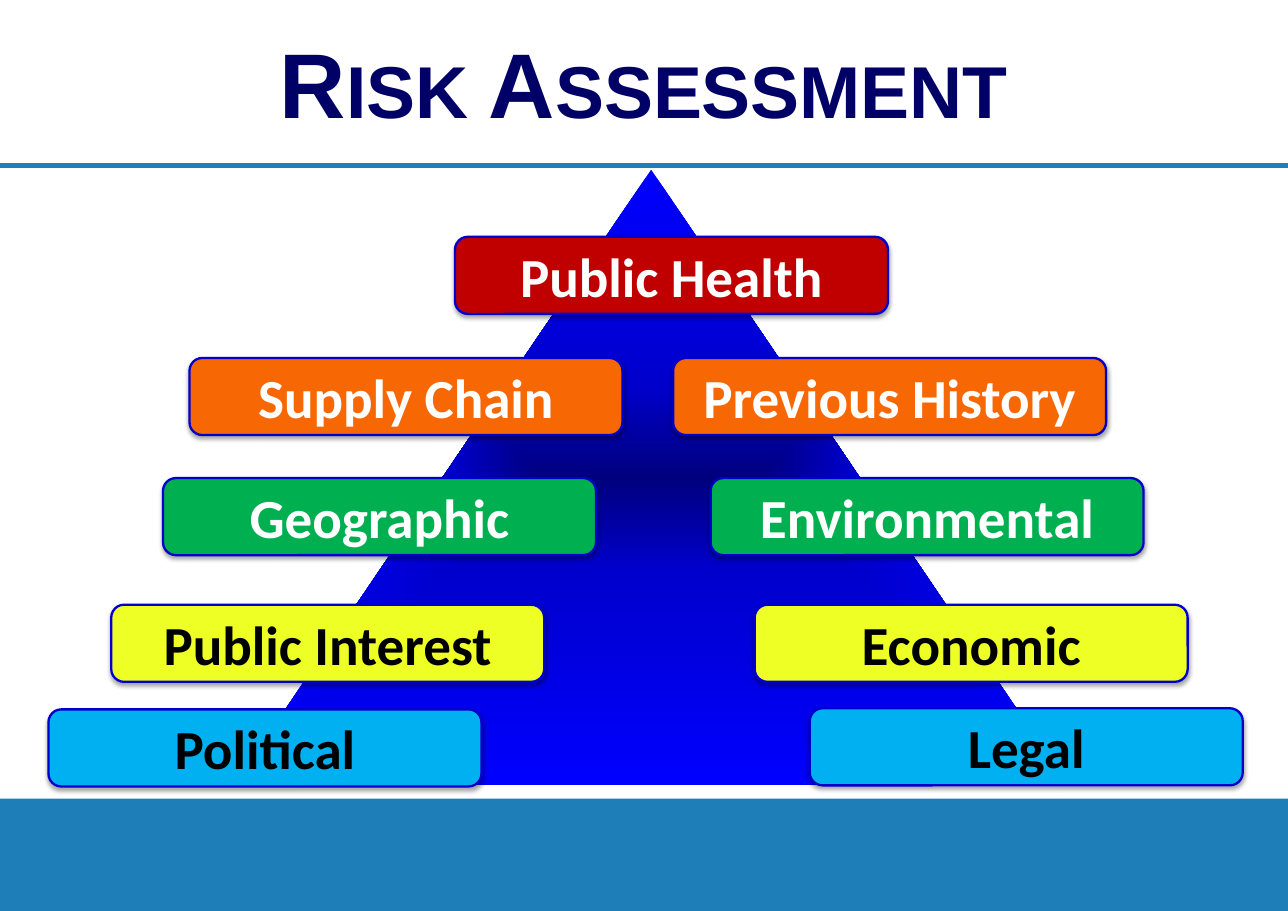
"""Build the risk assessment pyramid slide."""
from dataclasses import dataclass

from lxml import etree
from pptx import Presentation
from pptx.dml.color import RGBColor
from pptx.enum.shapes import MSO_CONNECTOR, MSO_SHAPE
from pptx.enum.text import MSO_ANCHOR, PP_ALIGN
from pptx.oxml import parse_xml
from pptx.oxml.ns import qn
from pptx.util import Inches, Pt

STRAIGHT = MSO_CONNECTOR.STRAIGHT
RECTANGLE = MSO_SHAPE.RECTANGLE
ROUNDED = MSO_SHAPE.ROUNDED_RECTANGLE
TRIANGLE = MSO_SHAPE.ISOSCELES_TRIANGLE
MIDDLE = MSO_ANCHOR.MIDDLE
CENTER = PP_ALIGN.CENTER
DRAWING_NS = "http://schemas.openxmlformats.org/drawingml/2006/main"


@dataclass(frozen=True)
class Theme:
    """Colours, fonts and sizes of the slide."""
    band: str = "1E7FB8"
    title: str = "000066"
    title_shadow: str = "8FCBEF"
    outline: str = "0000CC"
    black: str = "000000"
    white: str = "FFFFFF"
    red: str = "C00000"
    orange: str = "F76805"
    green: str = "00B050"
    yellow: str = "EEFF25"
    sky: str = "00B0F0"
    pyramid: tuple = ((0, "00007E"), (30, "0000CC"), (100, "0000FF"))
    title_font: str = "Arial"
    label_font: str = "Calibri"
    title_size: int = 60
    label_size: int = 36
    rule_width: float = 3
    outline_width: float = 1.5


THEME = Theme()
SLIDE_WIDTH, SLIDE_HEIGHT = 11.69, 8.27
LABEL_WIDTH, LABEL_HEIGHT = 3.93, 0.7
LABELS = (
    ("Public Health", 4.13, 2.15, THEME.red, THEME.white),
    ("Geographic", 1.48, 4.34, THEME.green, THEME.white),
    ("Environmental", 6.45, 4.34, THEME.green, THEME.white),
    ("Public Interest", 1.01, 5.49, THEME.yellow, THEME.black),
    ("Economic", 6.85, 5.49, THEME.yellow, THEME.black),
    ("Legal", 7.35, 6.43, THEME.sky, THEME.black),
    ("Political", 0.44, 6.44, THEME.sky, THEME.black),
    ("Previous History", 6.11, 3.25, THEME.orange, THEME.white),
    ("Supply Chain", 1.72, 3.25, THEME.orange, THEME.white),
)


def add_shadow(effects, color, opacity, blur, distance, degrees):
    """Put an outer shadow in an effect list."""
    shadow = etree.SubElement(
        effects, qn("a:outerShdw"), blurRad=str(Pt(blur)),
        dist=str(Pt(distance)), dir=str(degrees * 60000),
        algn="t", rotWithShape="0")
    tint = etree.SubElement(shadow, qn("a:srgbClr"), val=color)
    etree.SubElement(tint, qn("a:alpha"), val=str(opacity * 1000))


def add_block(page, kind, left, top, width, height, fill):
    """Add a plain filled shape without line or shadow."""
    block = page.shapes.add_shape(
        kind, Inches(left), Inches(top), Inches(width), Inches(height))
    block.shadow.inherit = False
    block.line.fill.background()
    block.fill.solid()
    block.fill.fore_color.rgb = RGBColor.from_string(fill)
    return block


def write_text(box, text, font, size, color):
    """Write one centred bold line and return its run."""
    frame = box.text_frame
    frame.word_wrap = True
    frame.vertical_anchor = MIDDLE
    frame.text = text
    para = frame.paragraphs[0]
    para.alignment = CENTER
    span = para.runs[0]
    span.font.size = Pt(size)
    span.font.bold = True
    span.font.name = font
    span.font.color.rgb = RGBColor.from_string(color)
    return span


def add_rule(page, top):
    """Add the full-width line under the title."""
    rule = page.shapes.add_connector(
        STRAIGHT, 0, Inches(top), Inches(SLIDE_WIDTH), Inches(top))
    rule.line.color.rgb = RGBColor.from_string(THEME.band)
    rule.line.width = Pt(THEME.rule_width)
    etree.SubElement(rule._element.spPr, qn("a:effectLst"))


def add_title(page, text):
    """Add the small-caps title with its light shadow."""
    box = page.shapes.add_textbox(0, 0, Inches(SLIDE_WIDTH), Inches(1.49))
    frame = box.text_frame
    frame.margin_left = frame.margin_right = 0
    frame.margin_top = frame.margin_bottom = 0
    span = write_text(box, text, THEME.title_font, THEME.title_size, THEME.title)
    properties = span.font._element
    properties.set("cap", "small")
    effects = etree.Element(qn("a:effectLst"))
    add_shadow(effects, THEME.title_shadow, 100, 0, 2, 45)
    properties.find(qn("a:solidFill")).addnext(effects)


def add_pyramid(page):
    """Add the triangle, shaded from its centre outwards."""
    pyramid = add_block(page, TRIANGLE, 2.12, 1.54, 7.58, 5.59, THEME.outline)
    stops = "".join(
        f'<a:gs pos="{place * 1000}"><a:srgbClr val="{color}"/></a:gs>'
        for place, color in THEME.pyramid)
    gradient = parse_xml(
        f'<a:gradFill xmlns:a="{DRAWING_NS}" rotWithShape="1">'
        f'<a:gsLst>{stops}</a:gsLst><a:path path="shape">'
        '<a:fillToRect l="50000" t="50000" r="50000" b="50000"/>'
        '</a:path></a:gradFill>')
    properties = pyramid._element.spPr
    properties.replace(properties.find(qn("a:solidFill")), gradient)


def add_label(page, text, left, top, fill, color):
    """Add one rounded risk label with a soft shadow."""
    label = add_block(page, ROUNDED, left, top, LABEL_WIDTH, LABEL_HEIGHT, fill)
    label.line.color.rgb = RGBColor.from_string(THEME.outline)
    label.line.width = Pt(THEME.outline_width)
    effects = label._element.spPr.find(qn("a:effectLst"))
    add_shadow(effects, THEME.black, 35, 3.1, 1.8, 90)
    write_text(label, text, THEME.label_font, THEME.label_size, color)


def main():
    """Build and save the slide."""
    deck = Presentation()
    deck.slide_width = Inches(SLIDE_WIDTH)
    deck.slide_height = Inches(SLIDE_HEIGHT)
    page = deck.slides.add_slide(deck.slide_layouts[6])
    add_rule(page, 1.5)
    add_block(page, RECTANGLE, 0, 7.25, SLIDE_WIDTH, 1.02, THEME.band)
    add_title(page, "Risk Assessment")
    add_pyramid(page)
    for label in LABELS:
        add_label(page, *label)
    deck.save("out.pptx")


if __name__ == "__main__":
    main()
